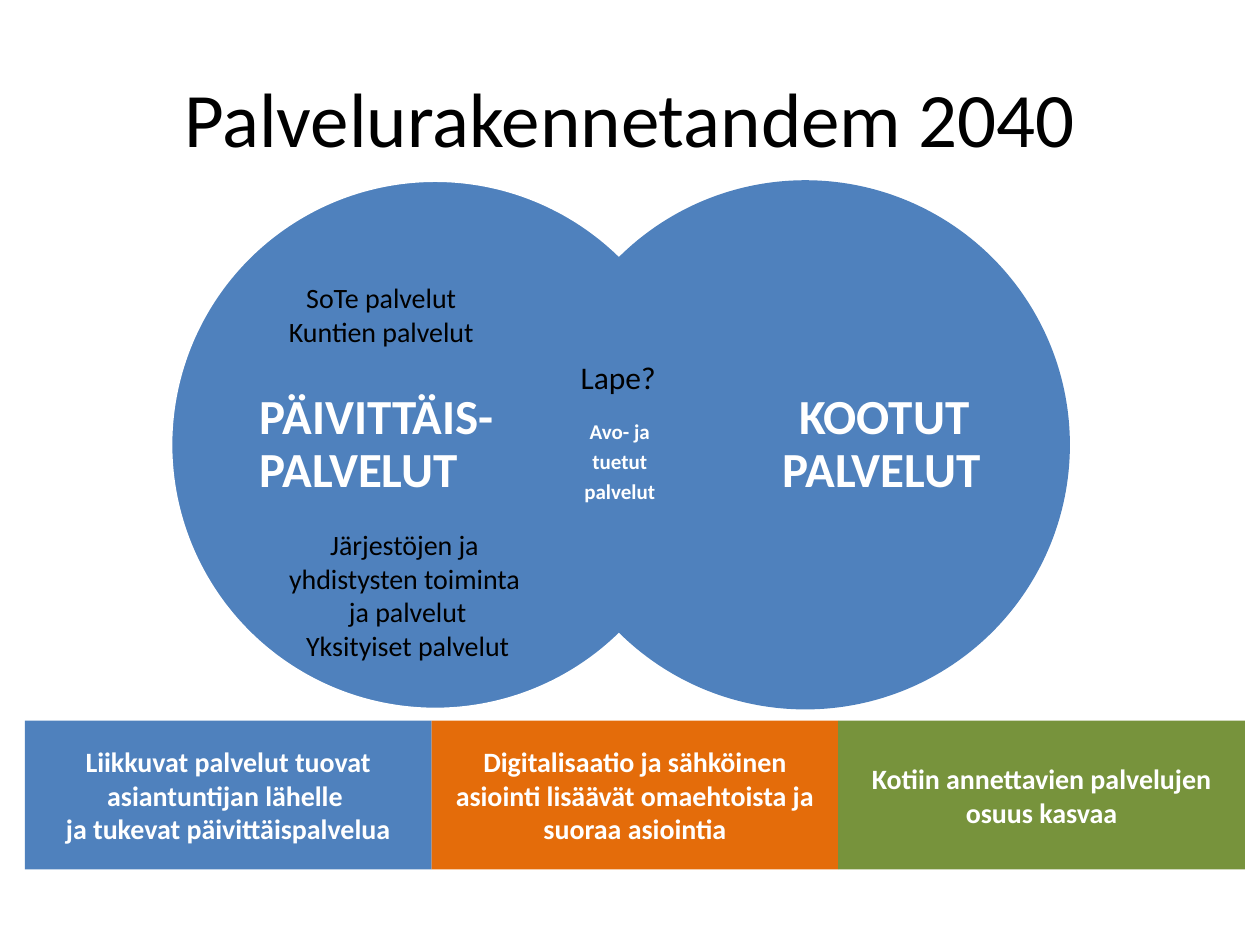
from dataclasses import dataclass

import pptx
import pptx.dml.color
import pptx.enum.shapes
import pptx.enum.text
import pptx.util

Pt = pptx.util.Pt
RGBColor = pptx.dml.color.RGBColor
ALIGN = pptx.enum.text.PP_ALIGN
ANCHOR = pptx.enum.text.MSO_ANCHOR
SHAPE = pptx.enum.shapes.MSO_SHAPE

BLACK = RGBColor(0x00, 0x00, 0x00)
WHITE = RGBColor(0xFF, 0xFF, 0xFF)
BLUE = RGBColor(0x4F, 0x81, 0xBD)
ORANGE = RGBColor(0xE4, 0x6C, 0x0A)
GREEN = RGBColor(0x77, 0x93, 0x3C)
FONT = "Calibri"


@dataclass
class Circle:
    text: str
    left: float
    top: float
    width: float
    height: float
    size: float
    align: ALIGN
    inset: float
    outline: float = 0


@dataclass
class Banner:
    text: str
    color: RGBColor


@dataclass
class Label:
    text: str
    left: float
    top: float
    width: float
    height: float
    size: float = 16
    align: ALIGN = ALIGN.CENTER


CIRCLES = [
    Circle("PÄIVITTÄIS-PALVELUT", 97.5, 103, 302.4, 302.4, 28, ALIGN.LEFT, 6.8, 2),
    Circle("KOOTUT \vPALVELUT", 309, 103, 302.4, 302.4, 28, ALIGN.RIGHT, 6.8),
    Circle("Avo- ja\ntuetut\npalvelut", 314.6, 230.4, 79.2, 67.7, 12, ALIGN.CENTER, 5),
]

BANNERS = [
    Banner("Liikkuvat palvelut tuovat asiantuntijan lähelle \v"
           "ja tukevat päivittäispalvelua", BLUE),
    Banner("Digitalisaatio ja sähköinen asiointi lisäävät omaehtoista ja\v"
           "suoraa asiointia", ORANGE),
    Banner("Kotiin annettavien palvelujen osuus kasvaa", GREEN),
]
BANNER_LEFT, BANNER_TOP = 14.2, 411.8
BANNER_WIDTH, BANNER_HEIGHT = 232.4, 85

LABELS = [
    Label("SoTe palvelut\nKuntien palvelut", 157, 157, 121.7, 46),
    Label("Järjestöjen ja \nyhdistysten toiminta \nja palvelut\nYksityiset palvelut",
          157, 298, 152, 85),
    Label("Lape?", 324.7, 201, 59.8, 29, 18, ALIGN.LEFT),
]


def write_text(frame, text: str, size: float, color: RGBColor,
               align: ALIGN, bold: bool = False) -> None:
    frame.text = text
    for para in frame.paragraphs:
        para.alignment = align
        for span in para.runs:
            span.font.name = FONT
            span.font.size = Pt(size)
            span.font.bold = bold
            span.font.color.rgb = color


def add_filled(page, kind: SHAPE, left: float, top: float, width: float,
               height: float, color: RGBColor):
    """Add a flat shape without outline, its text centred vertically."""
    shape = page.shapes.add_shape(kind, Pt(left), Pt(top), Pt(width), Pt(height))
    shape.shadow.inherit = False
    shape.fill.solid()
    shape.fill.fore_color.rgb = color
    shape.line.fill.background()
    shape.text_frame.word_wrap = True
    shape.text_frame.vertical_anchor = ANCHOR.MIDDLE
    return shape


def draw_circle(page, circle: Circle) -> None:
    shape = add_filled(page, SHAPE.OVAL, circle.left, circle.top,
                       circle.width, circle.height, BLUE)
    if circle.outline:
        shape.line.color.rgb = WHITE
        shape.line.width = Pt(circle.outline)
    frame = shape.text_frame
    frame.margin_left = frame.margin_right = Pt(circle.inset)
    frame.margin_top = frame.margin_bottom = Pt(circle.inset)
    write_text(frame, circle.text, circle.size, WHITE, circle.align, True)
    for para in frame.paragraphs:
        para.line_spacing = 0.9
        para.space_after = Pt(circle.size * 0.35)


def draw_banner(page, banner: Banner, column: int) -> None:
    shape = add_filled(page, SHAPE.RECTANGLE, BANNER_LEFT + column * BANNER_WIDTH,
                       BANNER_TOP, BANNER_WIDTH, BANNER_HEIGHT, banner.color)
    write_text(shape.text_frame, banner.text, 16, WHITE, ALIGN.CENTER, True)


def draw_label(page, label: Label) -> None:
    box = page.shapes.add_textbox(Pt(label.left), Pt(label.top),
                                  Pt(label.width), Pt(label.height))
    box.text_frame.word_wrap = False
    write_text(box.text_frame, label.text, label.size, BLACK, label.align)


def draw_title(page, text: str) -> None:
    title = page.shapes.title
    title.left, title.top, title.width, title.height = Pt(36), Pt(21.6), Pt(648), Pt(90)
    title.text_frame.vertical_anchor = ANCHOR.MIDDLE
    write_text(title.text_frame, text, 44, BLACK, ALIGN.CENTER)


def main() -> None:
    deck = pptx.Presentation()
    deck.slide_width, deck.slide_height = Pt(720), Pt(540)
    page = deck.slides.add_slide(deck.slide_layouts.get_by_name("Title Only"))
    draw_title(page, "Palvelurakennetandem 2040")
    for circle in CIRCLES:
        draw_circle(page, circle)
    for column, banner in enumerate(BANNERS):
        draw_banner(page, banner, column)
    for label in LABELS:
        draw_label(page, label)
    deck.save("out.pptx")


if __name__ == "__main__":
    main()
